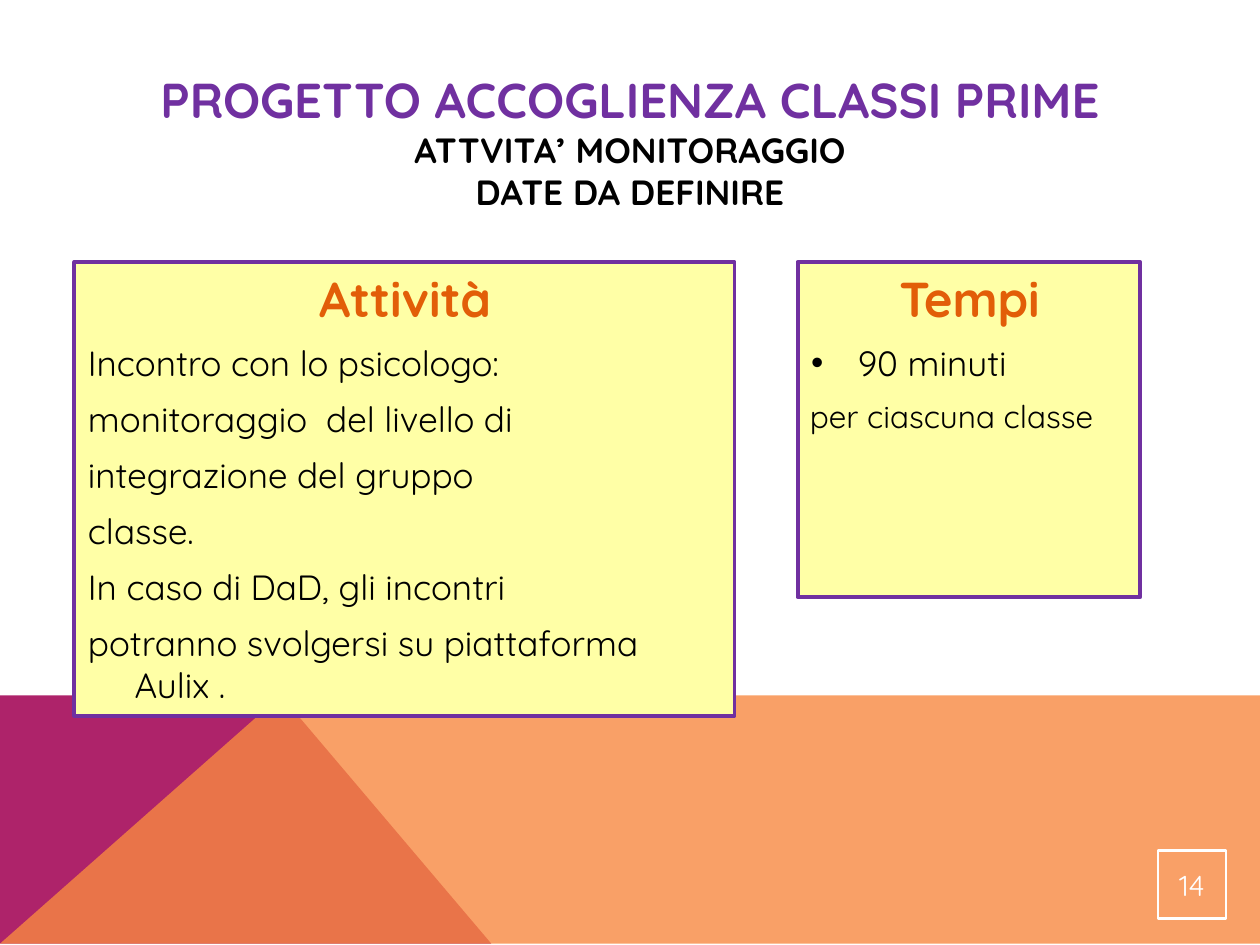
from lxml import etree
from pptx import Presentation
from pptx import util as u
from pptx.dml import color
from pptx.enum import shapes, text
from pptx.oxml import ns

# Content: title lines, panels of (heading, lines), page number
TITLE = ["PROGETTO ACCOGLIENZA CLASSI PRIME", "ATTVITA’ MONITORAGGIO", "DATE DA DEFINIRE"]
# Each line: wording, size, style
ACTIVITIES = ("Attività", [(line, "body", "hanging") for line in [
    "Incontro con lo psicologo:",
    "monitoraggio  del livello di",
    "integrazione del gruppo",
    "classe.",
    "In caso di DaD, gli incontri",
    "potranno svolgersi su piattaforma Aulix .",
]])
TIMES = ("Tempi", [("90 minuti", "body", "bullet"), ("per ciascuna classe", "small", "plain")])
PAGE_NUMBER = "14"

THEME = {
    "font": "Quicksand",
    "purple": "7030A0", "orange": "E25E08", "black": "000000", "white": "FFFFFF",
    "panel": "FFFFA6", "magenta": "AE236A", "peach": "F88941",
    "heading": 28, "body": 20, "small": 18, "page": 16.5,
}

# Geometry in inches
WIDTH, HEIGHT = 10, 7.5
BAND_TOP, BAND_BOTTOM, PEAK = 5.52, 7.49, 2.23
PANEL_TOP = 2.08
PANELS = [(TIMES, 6.33, 2.72, 2.66), (ACTIVITIES, 0.59, 5.24, 3.6)]
BADGE = 0.54

deck = Presentation()
deck.slide_width, deck.slide_height = u.Inches(WIDTH), u.Inches(HEIGHT)
slide = deck.slides.add_slide(deck.slide_layouts[6])


def rgb(name):
    return color.RGBColor.from_string(THEME[name])


def add_run(paragraph, wording, size, tint, bold=False):
    run = paragraph.add_run()
    run.text = wording
    run.font.name, run.font.size = THEME["font"], u.Pt(THEME[size])
    run.font.bold, run.font.color.rgb = bold, rgb(tint)


def add_band(points, tint, opacity=100):
    # Corners are in EMU, because the builder rounds them to whole units
    start, *corners = [(u.Inches(x), u.Inches(y)) for x, y in points]
    builder = slide.shapes.build_freeform(*start)
    builder.add_line_segments(corners, close=True)
    band = builder.convert_to_shape()
    band.shadow.inherit = False
    band.fill.solid()
    band.fill.fore_color.rgb = rgb(tint)
    band.line.fill.background()
    if opacity < 100:
        tone = next(band.fill._xPr.iter(ns.qn("a:srgbClr")))
        etree.SubElement(tone, ns.qn("a:alpha"), val=str(opacity * 1000))


def add_box(left, top, width, height, line, weight, fill=None):
    box = slide.shapes.add_shape(shapes.MSO_SHAPE.RECTANGLE,
                                 *map(u.Inches, (left, top, width, height)))
    box.shadow.inherit = False
    box.line.color.rgb, box.line.width = rgb(line), u.Pt(weight)
    if fill:
        box.fill.solid()
        box.fill.fore_color.rgb = rgb(fill)
    else:
        box.fill.background()
    box.text_frame.word_wrap = True
    return box.text_frame


def format_line(paragraph, style, align):
    paragraph.alignment = align
    paragraph.space_before = u.Pt(8)
    props = paragraph._p.get_or_add_pPr()
    if style != "plain":
        props.set("marL", str(u.Inches(0.38)))
        props.set("indent", str(u.Inches(-0.37)))
    if style == "bullet":
        tone = etree.SubElement(props, ns.qn("a:buClr"))
        etree.SubElement(tone, ns.qn("a:srgbClr"), val=THEME["black"])
        etree.SubElement(props, ns.qn("a:buFont"), typeface="Arial")
        etree.SubElement(props, ns.qn("a:buChar"), char="•")
    else:
        etree.SubElement(props, ns.qn("a:buNone"))
    # Tab stop at the left edge, so the bullet text starts at the margin
    tabs = etree.SubElement(props, ns.qn("a:tabLst"))
    etree.SubElement(tabs, ns.qn("a:tab"), pos="0", algn="l")


def add_panel(content, left, width, height):
    heading, lines = content
    frame = add_box(left, PANEL_TOP, width, height, "purple", 2.25, "panel")
    frame.vertical_anchor = text.MSO_ANCHOR.TOP
    first = frame.paragraphs[0]
    format_line(first, "hanging", text.PP_ALIGN.CENTER)
    add_run(first, heading, "heading", "orange", bold=True)
    for wording, size, style in lines:
        paragraph = frame.add_paragraph()
        format_line(paragraph, style, text.PP_ALIGN.LEFT)
        add_run(paragraph, wording, size, "black")


# Coloured bands at the foot
add_band([(0, BAND_BOTTOM), (0, BAND_TOP), (PEAK, BAND_TOP), (3.9, BAND_BOTTOM)], "magenta")
add_band([(0, BAND_BOTTOM), (PEAK, BAND_TOP), (WIDTH, BAND_TOP), (WIDTH, BAND_BOTTOM)],
         "peach", opacity=80)

# Title
title = slide.shapes.add_textbox(*map(u.Inches, (0.89, 0.58, 8.22, 1.08))).text_frame
title.word_wrap = True
title.vertical_anchor = text.MSO_ANCHOR.MIDDLE
title_line = title.paragraphs[0]
title_line.alignment = text.PP_ALIGN.CENTER
for row, wording in enumerate(TITLE):
    if row:
        title_line.add_line_break()
    size, tint = ("body", "black") if row else ("heading", "purple")
    add_run(title_line, wording, size, tint, bold=True)

# Panels
for panel in PANELS:
    add_panel(*panel)

# Page number
badge = add_box(9.19, 6.75, BADGE, BADGE, "white", 1.5)
badge.vertical_anchor = text.MSO_ANCHOR.MIDDLE
badge.margin_left = badge.margin_right = badge.margin_top = badge.margin_bottom = u.Inches(0.01)
badge.paragraphs[0].alignment = text.PP_ALIGN.CENTER
add_run(badge.paragraphs[0], PAGE_NUMBER, "page", "white")

deck.save("out.pptx")
